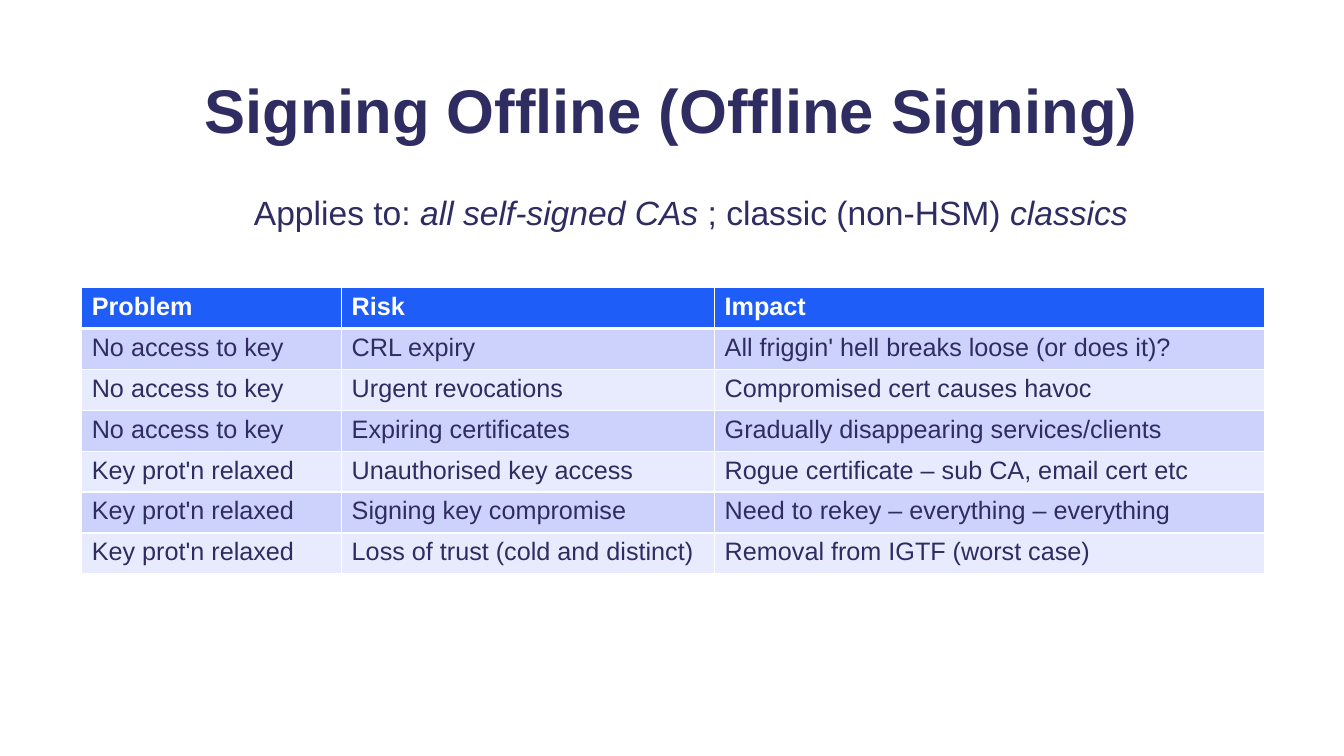
from lxml.etree import SubElement
from pptx import Presentation
from pptx.dml.color import RGBColor
from pptx.enum.text import MSO_ANCHOR, PP_ALIGN
from pptx.oxml.ns import qn
from pptx.util import Cm, Pt

COLORS = {
    "ink": "2E2C61",
    "white": "FFFFFF",
    "header": "1E5DF8",
    "band_dark": "CDD2FC",
    "band_light": "E8EAFE",
}

APPLIES_TO = [  # (text, italic)
    ("Applies to: ", False),
    ("all self-signed CAs", True),
    (" ; classic (non-HSM) ", False),
    ("classics", True),
]

RISKS = [
    ("Problem", "Risk", "Impact"),
    ("No access to key", "CRL expiry", "All friggin' hell breaks loose (or does it)?"),
    ("No access to key", "Urgent revocations", "Compromised cert causes havoc"),
    ("No access to key", "Expiring certificates", "Gradually disappearing services/clients"),
    ("Key prot'n relaxed", "Unauthorised key access", "Rogue certificate – sub CA, email cert etc"),
    ("Key prot'n relaxed", "Signing key compromise", "Need to rekey – everything – everything"),
    ("Key prot'n relaxed", "Loss of trust (cold and distinct)", "Removal from IGTF (worst case)"),
]


class SlideBuilder:
    def __init__(self, page, font="Arial"):
        self.page = page
        self.font = font

    def color(self, name):
        return RGBColor.from_string(COLORS[name])

    def style(self, para, size, color="ink", bold=False):
        para.font.name = self.font
        para.font.size = Pt(size)
        para.font.bold = bold
        para.font.color.rgb = self.color(color)

    def text(self, left, top, width, height, spans, size, bold=False,
             align=PP_ALIGN.LEFT, anchor=MSO_ANCHOR.TOP, line_spacing=1.0):
        box = self.page.shapes.add_textbox(Cm(left), Cm(top), Cm(width), Cm(height))
        frame = box.text_frame
        frame.word_wrap = True
        frame.vertical_anchor = anchor
        para = frame.paragraphs[0]
        para.alignment = align
        para.line_spacing = line_spacing
        self.style(para, size, bold=bold)
        for words, italic in spans:
            span = para.add_run()
            span.text = words
            span.font.italic = italic

    def borders(self, cell, widths):
        """Draw white cell edges; widths are points for left, right, top, bottom."""
        properties = cell._tc.get_or_add_tcPr()
        for side, width in zip("LRTB", widths):
            line = SubElement(properties, qn(f"a:ln{side}"), w=str(Pt(width)))
            fill = SubElement(line, qn("a:solidFill"))
            SubElement(fill, qn("a:srgbClr"), val=COLORS["white"])

    def table(self, left, top, column_widths, row_height, rows, size):
        """Add a table with a bold header, a thick rule below it and banded rows."""
        frame = self.page.shapes.add_table(
            len(rows), len(column_widths), Cm(left), Cm(top),
            Cm(sum(column_widths)), Cm(row_height * len(rows)))
        table = frame.table
        for column, width in zip(table.columns, column_widths):
            column.width = Cm(width)
        for index, values in enumerate(rows):
            table.rows[index].height = Cm(row_height)
            is_header = index == 0
            band = "band_dark" if index % 2 else "band_light"
            widths = (1, 1, 3 if index == 1 else 1, 3 if is_header else 1)
            for cell, value in zip(table.rows[index].cells, values):
                cell.text = value
                self.style(cell.text_frame.paragraphs[0], size,
                           "white" if is_header else "ink", bold=is_header)
                self.borders(cell, widths)
                cell.fill.solid()
                cell.fill.fore_color.rgb = self.color("header" if is_header else band)


def main():
    deck = Presentation()
    deck.slide_width, deck.slide_height = Cm(33.87), Cm(19.05)
    slide = SlideBuilder(deck.slides.add_slide(deck.slide_layouts[6]))
    slide.text(2.33, 1.01, 29.21, 3.68, [("Signing Offline (Offline Signing)", False)], 44,
               bold=True, align=PP_ALIGN.CENTER, anchor=MSO_ANCHOR.MIDDLE, line_spacing=0.9)
    slide.table(2.06, 7.25, (6.55, 9.4, 13.86), 1.03, RISKS, 18)
    slide.text(6.15, 4.72, 22.91, 1.28, APPLIES_TO, 24)
    deck.save("out.pptx")


if __name__ == "__main__":
    main()
